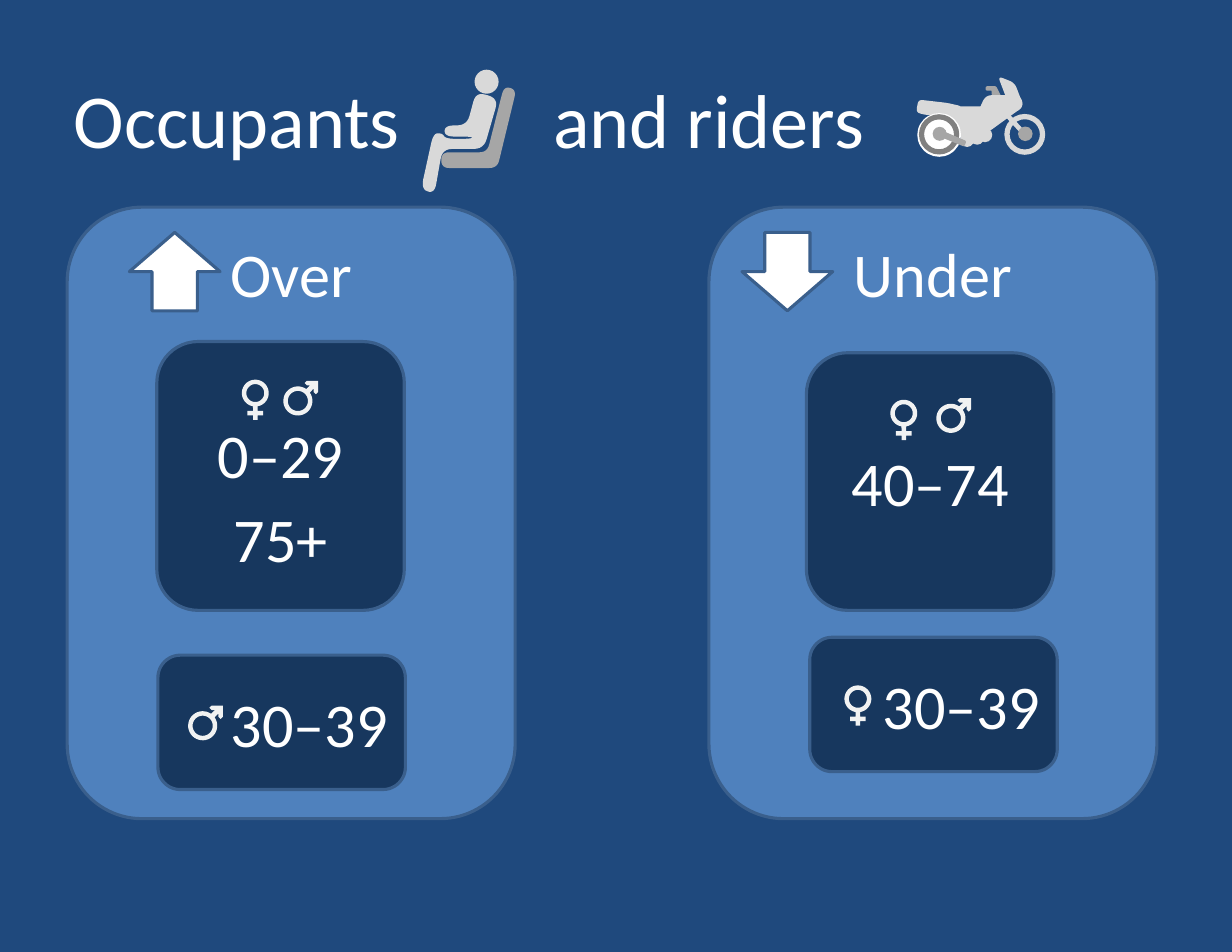
from dataclasses import dataclass
from math import cos, dist, radians, sin

from lxml import etree
from pptx import Presentation
from pptx.dml.color import RGBColor
from pptx.enum.shapes import MSO_SHAPE
from pptx.enum.text import MSO_ANCHOR, PP_ALIGN
from pptx.oxml.ns import qn
from pptx.util import Inches, Pt

ROUNDED, ARROW = MSO_SHAPE.ROUNDED_RECTANGLE, MSO_SHAPE.RIGHT_ARROW
OVAL, DONUT = MSO_SHAPE.OVAL, MSO_SHAPE.DONUT
TOP, MIDDLE = MSO_ANCHOR.TOP, MSO_ANCHOR.MIDDLE
LEFT, CENTER, RIGHT = PP_ALIGN.LEFT, PP_ALIGN.CENTER, PP_ALIGN.RIGHT

NAVY = RGBColor(0x1F, 0x49, 0x7D)
BLUE = RGBColor(0x4F, 0x81, 0xBD)
DARK = RGBColor(0x17, 0x37, 0x5E)
EDGE = RGBColor(0x3A, 0x5F, 0x8C)
WHITE = RGBColor(0xFF, 0xFF, 0xFF)
SYMBOL = RGBColor(0xF1, 0xF2, 0xF2)
LIGHT = RGBColor(0xD9, 0xD9, 0xD9)
MEDIUM = RGBColor(0xA6, 0xA6, 0xA6)
GREY = RGBColor(0x80, 0x80, 0x80)

# The slide is a grid of 1100 columns by 850 rows
COLUMNS, ROWS = 1100, 850
CELL = Inches(11) / COLUMNS
Point = tuple[float, float]


@dataclass(frozen=True)
class Box:
    left: float
    top: float
    width: float
    height: float


@dataclass(frozen=True)
class AgeBox:
    box: Box
    ages: tuple[str, ...]
    align: PP_ALIGN
    females: tuple[Point, ...] = ()  # centres of the symbols' rings
    males: tuple[Point, ...] = ()
    top_inset: float = 5


@dataclass(frozen=True)
class Card:
    box: Box
    heading: str
    arrow: Box
    turn: int
    age_boxes: tuple[AgeBox, ...]


@dataclass(frozen=True)
class Part:
    points: tuple[Point, ...]
    color: RGBColor
    radius: float


@dataclass(frozen=True)
class Disc:
    center: Point
    diameter: float
    color: RGBColor
    band: float = 0  # share of the diameter; 0 is a full disc


CARDS = (
    Card(Box(633, 185, 400, 546), "Under", Box(668, 202, 70, 81), 90, (
        AgeBox(Box(720, 315, 221, 230), ("40–74",), CENTER,
               females=((807, 369),), males=((849, 373.5),)),
        AgeBox(Box(723, 569, 221, 120), ("30–39",), RIGHT, females=((766, 624),)))),
    Card(Box(60, 185, 400, 546), "Over", Box(121, 202, 70, 81), 270, (
        AgeBox(Box(140, 305, 221, 240), ("0–29", "75+"), CENTER,
               females=((228, 351),), males=((266, 358),), top_inset=40),
        AgeBox(Box(141, 585, 221, 120), ("30–39",), RIGHT, males=((181, 648),)))),
)

PASSENGER = (
    Part(((394, 136), (435, 136), (450, 77), (461, 80), (444, 150), (394, 150)), MEDIUM, 7),
    Part(((395, 119), (387, 119), (376, 169), (388, 173), (395, 133), (432, 133),
          (445, 88), (425, 82), (417, 112), (397, 112), (397, 122), (422, 122),
          (421, 124), (398, 124)), LIGHT, 9),
    Disc((434.5, 73), 21.5, LIGHT),
)

MOTORCYCLE = (
    # handlebar, front wheel, seat, engine, tank
    Part(((880, 77), (890, 77), (890, 81), (880, 81)), MEDIUM, 2),
    Part(((885, 78), (890, 78), (896, 90), (886, 90)), MEDIUM, 0),
    Disc((915, 120), 36.5, LIGHT, 0.13),
    Part(((820, 89), (846, 92), (859, 95), (858, 107), (823, 102), (818, 100)), LIGHT, 4),
    Part(((848, 95), (883, 95), (883, 121), (854, 123)), LIGHT, 5),
    Part(((880, 85), (911, 85), (914, 95), (881, 119), (866, 116)), LIGHT, 6),
    Disc((863.5, 125), 12.5, LIGHT),
    Disc((872.5, 123), 12.5, LIGHT),
    Disc((879.5, 120.5), 13, LIGHT),
    # fork, fairing
    Part(((893, 99), (896, 96), (917, 119), (915, 123)), LIGHT, 2),
    Part(((891, 68), (906, 74), (914, 95), (906, 101), (901, 94)), LIGHT, 5),
    Disc((915.5, 119.5), 13, MEDIUM),
    # rear wheel and swing arm
    Disc((838.5, 120.5), 39, WHITE),
    Disc((838.5, 120), 36, GREY, 0.13),
    Part(((842, 117), (863, 126), (861, 131), (839, 122)), MEDIUM, 2),
    Disc((839, 119.5), 12.5, MEDIUM),
)


def emu(cells: float) -> int:
    return round(cells * CELL)


def add_box(shapes, kind: MSO_SHAPE, box: Box, fill: RGBColor, outlined: bool = False):
    shape = shapes.add_shape(kind, emu(box.left), emu(box.top), emu(box.width), emu(box.height))
    shape.shadow.inherit = False
    shape.fill.solid()
    shape.fill.fore_color.rgb = fill
    if outlined:
        shape.line.color.rgb = EDGE
        shape.line.width = Pt(2)
    else:
        shape.line.fill.background()
    return shape


def write(shape, *lines: str, size: float = 40, align: PP_ALIGN = CENTER,
          anchor: MSO_ANCHOR = MIDDLE, side: float = 10, top: float = 5,
          bottom: float = 5, after: float = 6, tab: float = 0) -> None:
    frame = shape.text_frame
    frame.word_wrap = True
    frame.vertical_anchor = anchor
    frame.margin_left = frame.margin_right = emu(side)
    frame.margin_top, frame.margin_bottom = emu(top), emu(bottom)
    for index, text in enumerate(lines):
        paragraph = frame.add_paragraph() if index else frame.paragraphs[0]
        paragraph.alignment = align
        paragraph.space_after = Pt(after)
        run = paragraph.add_run()
        run.text = text
        run.font.name, run.font.size = "Calibri", Pt(size)
        run.font.color.rgb = WHITE
        if tab:
            tabs = etree.SubElement(paragraph._p.get_or_add_pPr(), qn("a:tabLst"))
            etree.SubElement(tabs, qn("a:tab"), pos=str(emu(tab)), algn="l")


def add_outline(shapes, contours: list[list[Point]], fill: RGBColor) -> None:
    contours = [[(emu(x), emu(y)) for x, y in contour] for contour in contours]
    builder = shapes.build_freeform(*contours[0][0], scale=1.0)
    builder.add_line_segments(contours[0][1:], close=True)
    for contour in contours[1:]:
        builder.move_to(*contour[0])
        builder.add_line_segments(contour[1:], close=True)
    shape = builder.convert_to_shape()
    shape.shadow.inherit = False
    shape.fill.solid()
    shape.fill.fore_color.rgb = fill
    shape.line.fill.background()


def arc(center: Point, radius: float, start: float, end: float, steps: int = 36) -> list[Point]:
    angles = [radians(start + (end - start) * step / steps) for step in range(steps + 1)]
    return [(center[0] + radius * cos(angle), center[1] + radius * sin(angle)) for angle in angles]


def rounded(points: tuple[Point, ...], radius: float, steps: int = 6) -> list[Point]:
    """Replace each corner by a quadratic curve."""
    result = []
    for index, corner in enumerate(points):
        ends = []
        for other in (points[index - 1], points[(index + 1) % len(points)]):
            share = min(radius / dist(corner, other), 0.5)
            ends.append([c + (o - c) * share for c, o in zip(corner, other)])
        for step in range(steps + 1):
            t = step / steps
            result.append(tuple((1 - t) ** 2 * a + 2 * t * (1 - t) * c + t * t * b
                                for a, c, b in zip(ends[0], corner, ends[1])))
    return result


def add_symbol(shapes, center: Point, radius: float, start: float, end: float,
               tail: tuple[Point, ...]) -> None:
    ring = arc(center, radius, start, end)
    ring += [(center[0] + x, center[1] + y) for x, y in tail]
    add_outline(shapes, [ring, arc(center, radius - 4, 0, 360)], SYMBOL)


def add_female(shapes, center: Point) -> None:
    half = ((2, 16), (7, 16), (7, 20), (2, 20), (2, 24))
    add_symbol(shapes, center, 12, 100, 440, half + tuple((-x, y) for x, y in reversed(half)))


def add_male(shapes, center: Point) -> None:
    half = ((11, -14), (8, -14), (6, -16), (8, -18), (18, -18))
    mirrored = tuple((-y, -x) for x, y in reversed(half[:-1]))
    add_symbol(shapes, center, 13, -35, 305, half + mirrored)


def add_icon(shapes, pieces: tuple[Part | Disc, ...]) -> None:
    group = shapes.add_group_shape().shapes
    for piece in pieces:
        if isinstance(piece, Part):
            outline = rounded(piece.points, piece.radius) if piece.radius else list(piece.points)
            add_outline(group, [outline], piece.color)
            continue
        (x, y), size = piece.center, piece.diameter
        box = Box(x - size / 2, y - size / 2, size, size)
        shape = add_box(group, DONUT if piece.band else OVAL, box, piece.color)
        if piece.band:
            shape.adjustments[0] = piece.band


def add_card(shapes, card: Card) -> None:
    panel = add_box(shapes, ROUNDED, card.box, BLUE, outlined=True)
    write(panel, card.heading, anchor=TOP, side=11, top=6, bottom=6, after=0)
    add_box(shapes, ARROW, card.arrow, WHITE, outlined=True).rotation = card.turn
    for item in card.age_boxes:
        shape = add_box(shapes, ROUNDED, item.box, DARK, outlined=True)
        write(shape, *item.ages, align=item.align, top=item.top_inset)
        for center in item.females:
            add_female(shapes, center)
        for center in item.males:
            add_male(shapes, center)


def main() -> None:
    presentation = Presentation()
    presentation.slide_width, presentation.slide_height = emu(COLUMNS), emu(ROWS)
    slide = presentation.slides.add_slide(presentation.slide_layouts[6])
    slide.background.fill.solid()
    slide.background.fill.fore_color.rgb = NAVY

    # Title, with a tab leaving room for the passenger
    title = slide.shapes.add_textbox(emu(55), emu(34), emu(990), emu(142))
    write(title, "Occupants\tand riders", size=49, align=LEFT, side=11,
          top=6, bottom=6, after=0, tab=428)
    add_icon(slide.shapes, PASSENGER)
    add_icon(slide.shapes, MOTORCYCLE)

    # Cards of over- and under-represented ages
    for card in CARDS:
        add_card(slide.shapes, card)
    presentation.save("out.pptx")


if __name__ == "__main__":
    main()
